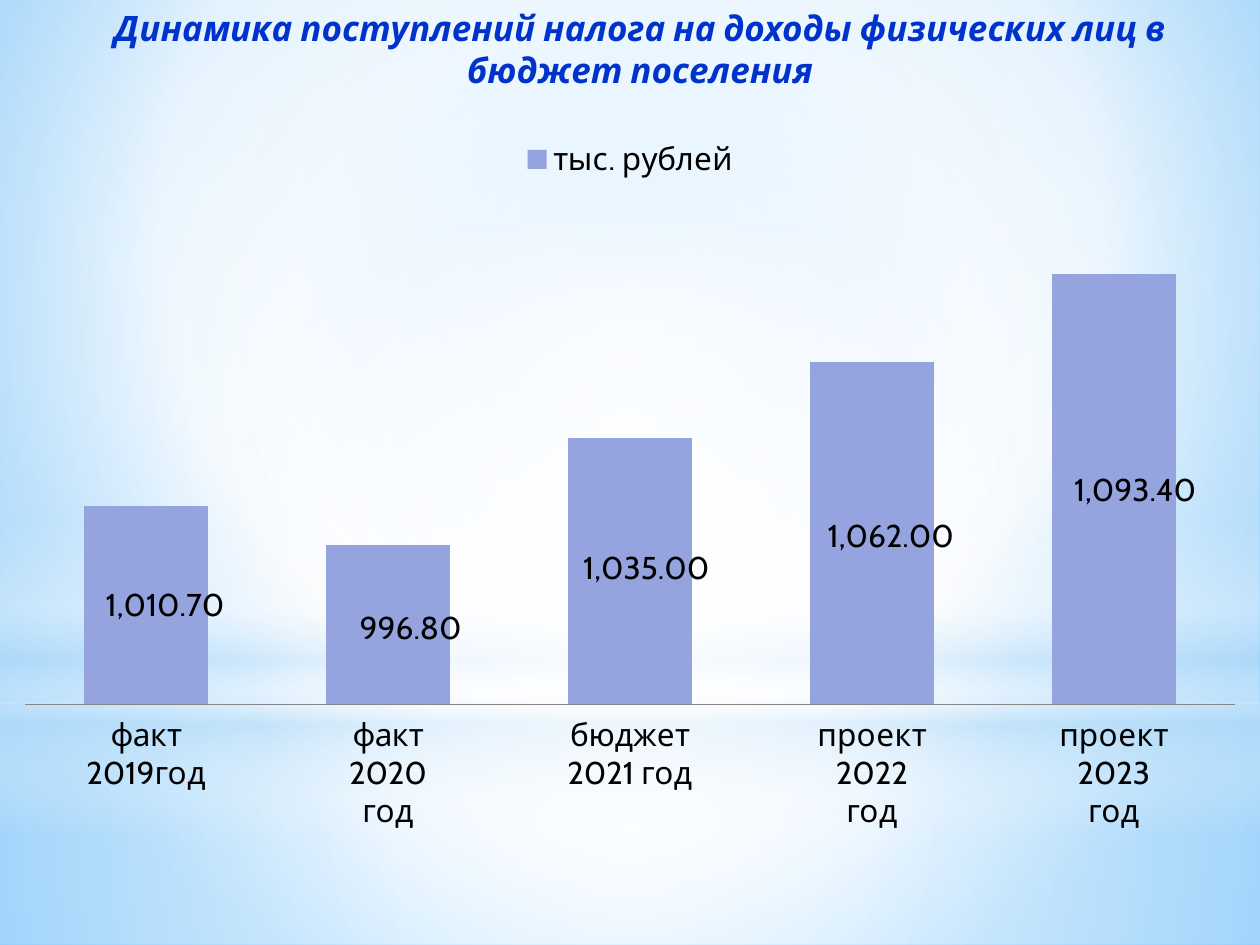
from lxml.etree import SubElement
from pptx import Presentation
from pptx.chart.data import CategoryChartData
from pptx.dml.color import RGBColor
from pptx.enum.chart import XL_CHART_TYPE, XL_LEGEND_POSITION, XL_TICK_LABEL_POSITION, XL_TICK_MARK
from pptx.enum.shapes import MSO_SHAPE
from pptx.enum.text import MSO_ANCHOR, PP_ALIGN
from pptx.oxml import parse_xml
from pptx.oxml.ns import nsdecls, qn
from pptx.util import Inches, Pt

TITLE = "Динамика поступлений налога на доходы физических лиц в бюджет поселения"
SERIES = "тыс. рублей"
REVENUE = [
    ("факт\n2019год", 1010.7, (0.15, 0)),
    ("факт\n2020\nгод", 996.8, (0.18, 0.03)),
    ("бюджет\n2021 год", 1035, (0.13, -0.02)),
    ("проект\n2022\nгод", 1062, (0.15, 0.03)),
    ("проект\n2023\nгод", 1093.4, (0.17, 0.01)),
]
FONT = "Cabin"
NUMBER_FORMAT = "#,##0.00"
TITLE_BLUE = RGBColor(0x00, 0x33, 0xCC)
BAR_BLUE = RGBColor(0x95, 0xA4, 0xDE)
BLACK = RGBColor(0x00, 0x00, 0x00)
AXIS_GRAY = RGBColor(0x86, 0x86, 0x86)
WHITE, SKY = RGBColor(0xFF, 0xFF, 0xFF), RGBColor(0xB4, 0xDC, 0xFA)
PALE_BLUE, DEEP_BLUE = RGBColor(0x9E, 0xD5, 0xFF), RGBColor(0x5B, 0xB9, 0xFF)

CENTER = (50, 50, 50, 50)
BACKGROUND_STOPS = [(0, PALE_BLUE, 100), (60, WHITE, 100), (100, DEEP_BLUE, 100)]
BACKGROUND_FOCUS = (20, 10, 20, 60)
GLOWS = [
    (MSO_SHAPE.RECTANGLE, (0, 5.58, 10, 1.92), CENTER,
     [(0, WHITE, 91), (37, WHITE, 76), (100, SKY, 79)]),
    (MSO_SHAPE.RECTANGLE, (0, 0, 10, 5.58), CENTER,
     [(0, WHITE, 89), (48, WHITE, 62), (100, SKY, 79)]),
    (MSO_SHAPE.RECTANGLE, (0, 4.12, 10, 2.5), None,
     [(0, WHITE, 0), (29, WHITE, 30), (45, SKY, 40), (55, WHITE, 26), (65, SKY, 60), (100, WHITE, 0)]),
    (MSO_SHAPE.OVAL, (0, 1.75, 10, 5.58), CENTER,
     [(0, WHITE, 100), (56, WHITE, 0)]),
]
CHART_WIDTH, CHART_HEIGHT = 10, 5.66
PLOT_BOX = (0.2, 0.59, 9.6, 4.01)


def gradient_xml(stops, focus):
    stop_xml = "".join(
        f'<a:gs pos="{position * 1000}"><a:srgbClr val="{color}">'
        f'<a:alpha val="{opacity * 1000}"/></a:srgbClr></a:gs>'
        for position, color, opacity in stops
    )
    if focus:
        sides = " ".join(f'{side}="{value * 1000}"' for side, value in zip("ltrb", focus))
        direction = f'<a:path path="circle"><a:fillToRect {sides}/></a:path>'
    else:
        direction = '<a:lin ang="5400000" scaled="0"/>'
    return parse_xml(
        f'<a:gradFill {nsdecls("a")} rotWithShape="1"><a:gsLst>{stop_xml}</a:gsLst>{direction}</a:gradFill>'
    )


def set_gradient(fill, parent, stops, focus):
    fill.solid()
    solid = parent.find(".//" + qn("a:solidFill"))
    solid.getparent().replace(solid, gradient_xml(stops, focus))


def manual_layout(lengths, inner=False):
    layout = parse_xml(f'<c:layout {nsdecls("c")}><c:manualLayout/></c:layout>')
    settings = {"layoutTarget": "inner", "xMode": "edge", "yMode": "edge"} if inner else {}
    totals = (CHART_WIDTH, CHART_HEIGHT) * 2
    fractions = {name: length / total for name, length, total in zip("xywh", lengths, totals)}
    for name, value in {**settings, **fractions}.items():
        SubElement(layout[0], qn(f"c:{name}")).set("val", str(value))
    return layout


def add_glows(slide):
    for preset, box, focus, stops in GLOWS:
        shape = slide.shapes.add_shape(preset, *map(Inches, box))
        shape.shadow.inherit = False
        shape.line.fill.background()
        set_gradient(shape.fill, shape._element.spPr, stops, focus)


def format_title(slide):
    title = slide.shapes.title
    title.left, title.top, title.width, title.height = map(Inches, (0.33, 0, 9.5, 1.15))
    frame = title.text_frame
    frame.text = TITLE
    frame.word_wrap = True
    frame.vertical_anchor = MSO_ANCHOR.TOP
    paragraph = frame.paragraphs[0]
    paragraph.alignment = PP_ALIGN.CENTER
    font = paragraph.runs[0].font
    font.name, font.size, font.bold, font.italic = FONT, Pt(20), True, True
    font.color.rgb = TITLE_BLUE
    slide.shapes._spTree.append(title._element)


def add_revenue_chart(slide):
    categories, values, label_shifts = zip(*REVENUE)
    data = CategoryChartData(number_format=NUMBER_FORMAT)
    data.categories = categories
    data.add_series(SERIES, values)
    box = map(Inches, (0, 0.99, CHART_WIDTH, CHART_HEIGHT))
    chart = slide.shapes.add_chart(XL_CHART_TYPE.COLUMN_STACKED, *box, data).chart
    chart.font.name, chart.font.size = FONT, Pt(18)
    chart.font.color.rgb = BLACK
    chart.has_title = False
    chart.has_legend = True
    chart.legend.position = XL_LEGEND_POSITION.TOP
    chart.legend.include_in_layout = False

    category_axis, value_axis = chart.category_axis, chart.value_axis
    category_axis.major_tick_mark = XL_TICK_MARK.NONE
    category_axis.tick_label_position = XL_TICK_LABEL_POSITION.LOW
    category_axis.format.line.color.rgb = AXIS_GRAY
    value_axis.minimum_scale, value_axis.maximum_scale = 940, 1120
    value_axis.has_major_gridlines = False
    value_axis.tick_labels.number_format = NUMBER_FORMAT
    value_axis.tick_labels.number_format_is_linked = False
    value_axis.visible = False

    plot = chart.plots[0]
    plot.gap_width, plot.overlap = 95, 100
    plot.vary_by_categories = False
    series = plot.series[0]
    series.format.fill.solid()
    series.format.fill.fore_color.rgb = BAR_BLUE
    labels = series.data_labels
    labels.show_value = True
    labels.number_format = NUMBER_FORMAT
    labels.number_format_is_linked = False
    for index, shift in enumerate(label_shifts):
        label = labels._element.get_or_add_dLbl_for_point(index)
        label.find(qn("c:idx")).addnext(manual_layout(shift))

    plot_area = chart._chartSpace.chart.plotArea
    for layout in plot_area.findall(qn("c:layout")):
        plot_area.remove(layout)
    plot_area.insert(0, manual_layout(PLOT_BOX, inner=True))


def main():
    """Build the slide on income tax revenue and save it."""
    presentation = Presentation()
    presentation.slide_width, presentation.slide_height = Inches(10), Inches(7.5)
    slide = presentation.slides.add_slide(presentation.slide_layouts[5])
    set_gradient(slide.background.fill, slide._element.cSld, BACKGROUND_STOPS, BACKGROUND_FOCUS)
    add_glows(slide)
    format_title(slide)
    add_revenue_chart(slide)
    presentation.save("out.pptx")


if __name__ == "__main__":
    main()
